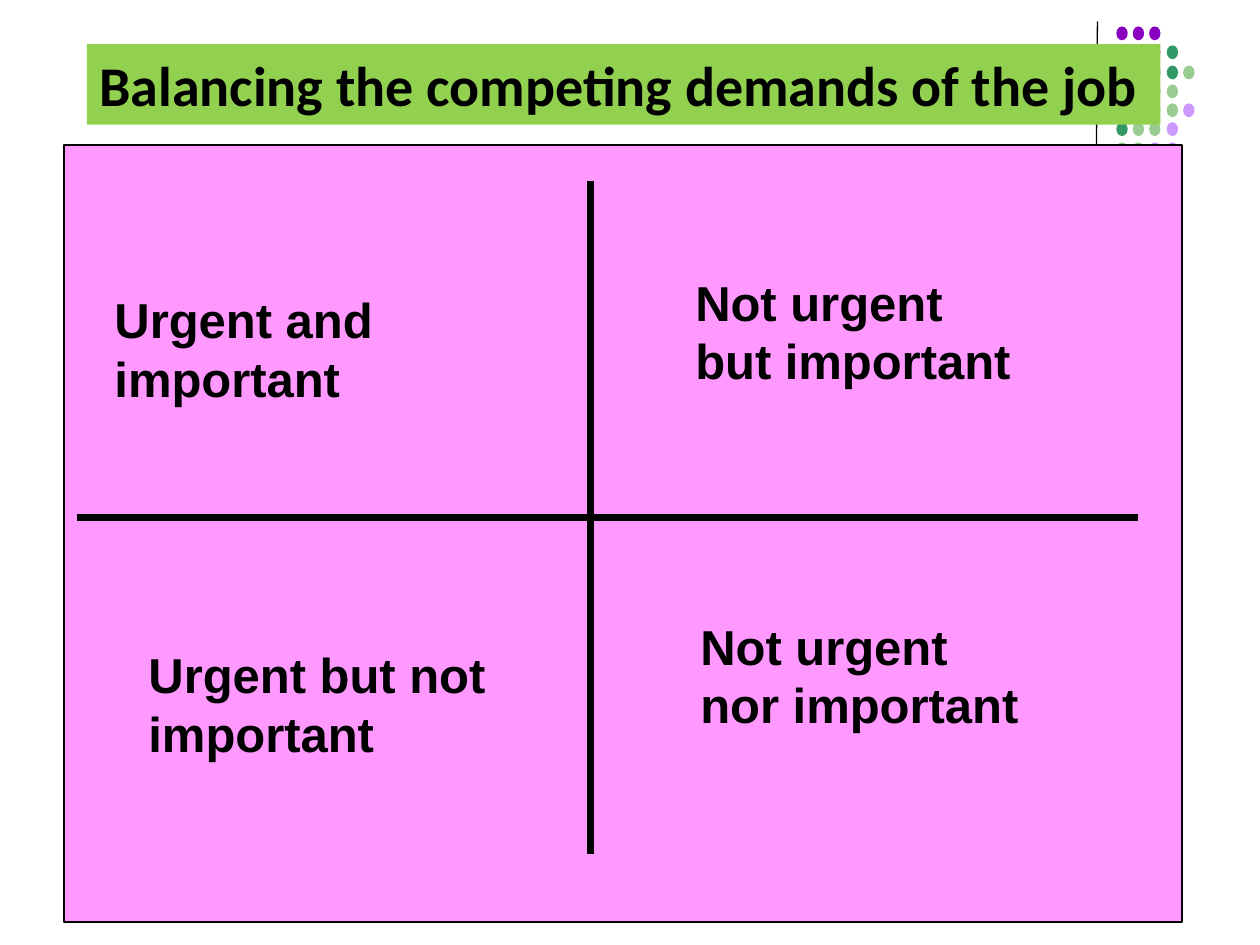
from dataclasses import dataclass

from lxml import etree
from pptx import Presentation
from pptx.dml.color import RGBColor
from pptx.enum.shapes import MSO_CONNECTOR, MSO_SHAPE
from pptx.enum.text import MSO_ANCHOR, PP_ALIGN
from pptx.oxml.ns import qn
from pptx.util import Inches, Pt

STRAIGHT = MSO_CONNECTOR.STRAIGHT
RECT, OVAL = MSO_SHAPE.RECTANGLE, MSO_SHAPE.OVAL
MIDDLE, LEFT = MSO_ANCHOR.MIDDLE, PP_ALIGN.LEFT


@dataclass(frozen=True)
class Theme:
    black: RGBColor = RGBColor.from_string("000000")
    panel: RGBColor = RGBColor.from_string("FF99FF")
    banner: RGBColor = RGBColor.from_string("92D050")
    purple: RGBColor = RGBColor.from_string("8A00C0")
    green: RGBColor = RGBColor.from_string("339966")
    light_green: RGBColor = RGBColor.from_string("99CC91")
    lilac: RGBColor = RGBColor.from_string("CC99FF")
    title_size: Pt = Pt(32)
    label_size: Pt = Pt(28)


theme = Theme()
prs = Presentation()
prs.slide_width, prs.slide_height = Inches(10), Inches(7.5)
s = prs.slides.add_slide(prs.slide_layouts[6])


def add_filled(kind, x, y, w, h, color):
    sp = s.shapes.add_shape(kind, Inches(x), Inches(y), Inches(w), Inches(h))
    sp.shadow.inherit = False
    sp.fill.solid()
    sp.fill.fore_color.rgb = color
    sp.line.fill.background()
    return sp


def add_line(x1, y1, x2, y2, width):
    ln = s.shapes.add_connector(STRAIGHT, Inches(x1), Inches(y1), Inches(x2), Inches(y2))
    ln.line.color.rgb = theme.black
    ln.line.width = Pt(width)
    etree.SubElement(ln._element.spPr, qn("a:effectLst"))


# Corner decoration: thin rule and dot grid
add_line(8.71, 0.17, 8.7, 1.47, 0.75)
dot_colors = {"P": theme.purple, "G": theme.green, "L": theme.light_green, "V": theme.lilac}
dot_rows = ["PPP", "PPPG", "  GGL", "  GL", "  LLV", "GLLV", "LLVV"]
for row, dots in enumerate(dot_rows):
    for col, key in enumerate(dots):
        if key in dot_colors:
            add_filled(OVAL, round(8.86 + col * 0.1325, 2), round(0.21 + row * 0.153, 2),
                       0.09, 0.11, dot_colors[key])

# Matrix panel and its axes
panel = add_filled(RECT, 0.51, 1.15, 8.87, 6.17, theme.panel)
panel.line.color.rgb = theme.black
panel.line.width = Pt(1)
add_line(4.69, 1.44, 4.69, 6.78, 4)
add_line(0.61, 4.11, 9.03, 4.11, 4)

# Quadrant labels
labels = [
    (0.81, 2.25, 3.08, True, ["Urgent and important"]),
    (1.08, 5.07, 3.04, True, ["Urgent but not important"]),
    (5.46, 4.84, 2.79, False, ["Not urgent", "nor important"]),
    (5.42, 2.11, 2.83, True, ["Not urgent but important"]),
]
for x, y, w, wrap, lines in labels:
    tf = s.shapes.add_textbox(Inches(x), Inches(y), Inches(w), Inches(1.04)).text_frame
    tf.word_wrap = wrap
    tf.text = "\n".join(lines)
    for p in tf.paragraphs:
        p.font.name, p.font.size, p.font.bold = "Arial", theme.label_size, True
        p.font.color.rgb = theme.black

# Title banner
banner = add_filled(RECT, 0.69, 0.35, 8.52, 0.64, theme.banner)
tf = banner.text_frame
tf.word_wrap = False
tf.vertical_anchor = MIDDLE
p = tf.paragraphs[0]
p.text = "Balancing the competing demands of the job"
p.alignment = LEFT
p.font.name, p.font.size, p.font.bold = "Calibri", theme.title_size, True
p.font.color.rgb = theme.black

prs.save("out.pptx")
